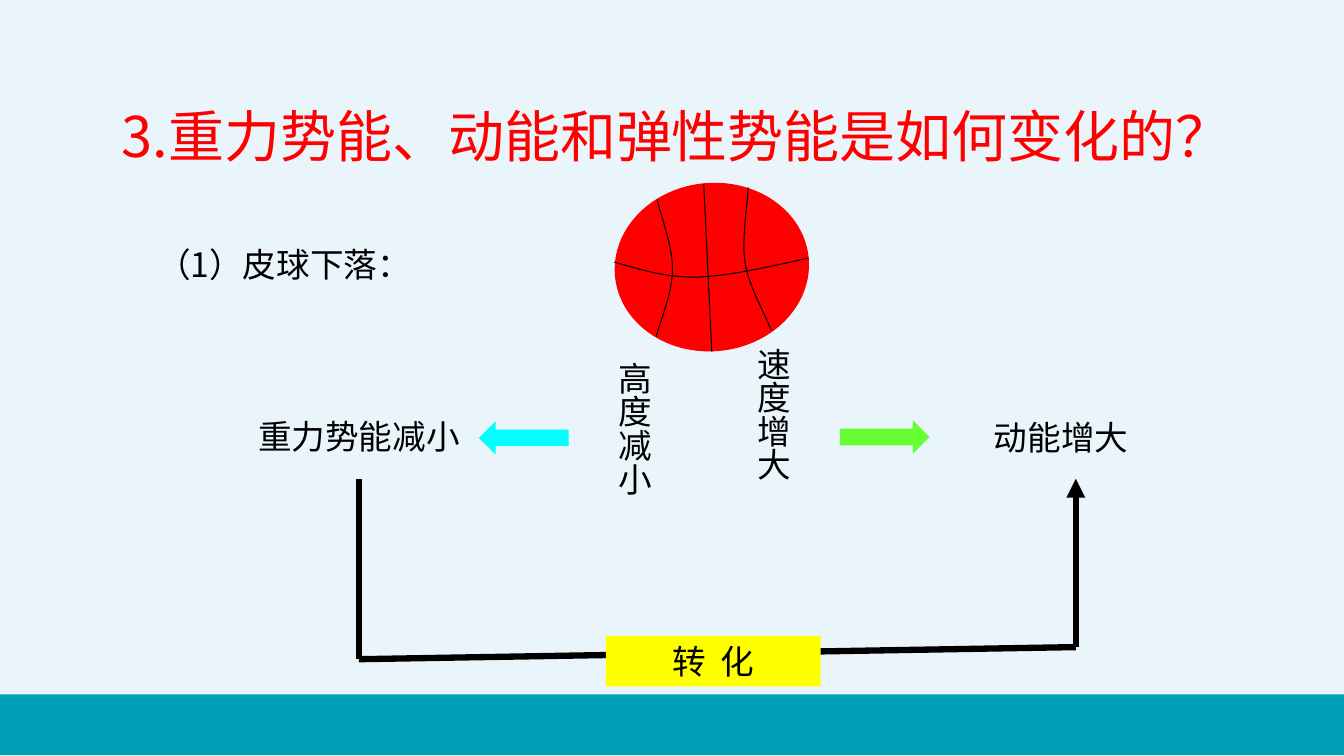
from lxml import etree
from pptx import Presentation
from pptx.dml.color import RGBColor
from pptx.enum.dml import MSO_FILL
from pptx.enum.shapes import MSO_CONNECTOR, MSO_SHAPE
from pptx.enum.text import MSO_ANCHOR, MSO_AUTO_SIZE, PP_ALIGN
from pptx.oxml.ns import qn
from pptx.util import Inches, Pt

RECTANGLE, OVAL = MSO_SHAPE.RECTANGLE, MSO_SHAPE.OVAL
LEFT_ARROW, DOWN_ARROW = MSO_SHAPE.LEFT_ARROW, MSO_SHAPE.DOWN_ARROW
STRAIGHT = MSO_CONNECTOR.STRAIGHT
LEFT, CENTER = PP_ALIGN.LEFT, PP_ALIGN.CENTER
TOP, MIDDLE = MSO_ANCHOR.TOP, MSO_ANCHOR.MIDDLE
GROW = MSO_AUTO_SIZE.SHAPE_TO_FIT_TEXT

FONT = "Noto Sans CJK SC"
PALE_BLUE = RGBColor(0xEA, 0xF5, 0xFB)
TEAL = RGBColor(0x00, 0x9F, 0xB9)
RED = RGBColor(0xFF, 0x00, 0x00)
BLACK = RGBColor(0x00, 0x00, 0x00)
CYAN = RGBColor(0x00, 0xFF, 0xFF)
GREEN = RGBColor(0x66, 0xFF, 0x33)
YELLOW = RGBColor(0xFF, 0xFF, 0x00)

BALL_SEAMS = [
    [(6.52, 1.98), (6.54, 2.1), (6.68, 2.46), (6.67, 2.68),
     (6.67, 2.91), (6.54, 3.21), (6.51, 3.34)],
    [(7.42, 1.86), (7.42, 1.99), (7.35, 2.38), (7.39, 2.61),
     (7.43, 2.85), (7.6, 3.14), (7.65, 3.28)],
    [(6.09, 2.6), (6.34, 2.67), (6.58, 2.75), (6.9, 2.75),
     (7.22, 2.74), (7.62, 2.65), (8.02, 2.56)],
    [(6.98, 1.83), (6.98, 1.83), (7.02, 2.66), (7.06, 3.49)],
]
CURVE_STEPS = 12


def add_block(slide, preset, box, fill=None, rotation=0):
    """Add a preset shape without an outline; no fill colour leaves it clear."""
    block = slide.shapes.add_shape(preset, *map(Inches, box))
    block.shadow.inherit = False
    block.line.fill.background()
    if fill is None:
        block.fill.background()
    else:
        block.fill.solid()
        block.fill.fore_color.rgb = fill
    block.rotation = rotation
    return block


def write(frame, pieces, size=24, color=BLACK, align=CENTER, anchor=TOP):
    """Write the pieces as runs of one paragraph and return the paragraph."""
    frame.vertical_anchor = anchor
    paragraph = frame.paragraphs[0]
    paragraph.alignment = align
    for piece in pieces:
        run = paragraph.add_run()
        run.text = piece
        run.font.size = Pt(size)
        run.font.name = FONT
        run.font.color.rgb = color
        east_asian = etree.SubElement(run.font._element, qn("a:ea"))
        east_asian.set("typeface", FONT)
    return paragraph


def add_label(slide, box, text, **style):
    """Add a wrapping text box and return its paragraph."""
    frame = slide.shapes.add_textbox(*map(Inches, box)).text_frame
    frame.word_wrap = True
    frame.auto_size = GROW
    return write(frame, [text], **style)


def add_vertical_label(slide, box, tip, text):
    """Add vertical text carried by a clear down arrow."""
    carrier = add_block(slide, DOWN_ARROW, box)
    carrier.adjustments[1] = tip
    frame = carrier.text_frame
    frame.word_wrap = False
    frame._txBody.bodyPr.set("vert", "eaVert")
    write(frame, [text], anchor=MIDDLE)


def curve_points(controls):
    """Return points along a chain of cubic curves."""
    points = [controls[0]]
    for first in range(0, len(controls) - 1, 3):
        a, b, c, d = controls[first:first + 4]
        for step in range(1, CURVE_STEPS + 1):
            t = step / CURVE_STEPS
            u = 1 - t
            points.append(tuple(
                u**3 * a[i] + 3 * u * u * t * b[i] + 3 * u * t * t * c[i] + t**3 * d[i]
                for i in (0, 1)))
    return points


def add_seam(slide, controls):
    """Draw one curved seam of the ball."""
    points = [(Inches(x), Inches(y)) for x, y in curve_points(controls)]
    builder = slide.shapes.build_freeform(*points[0])
    builder.add_line_segments(points[1:], close=False)
    seam = builder.convert_to_shape()
    seam.shadow.inherit = False
    seam.fill.background()
    seam.line.color.rgb = BLACK
    seam.line.width = Pt(0.75)


def add_ball(slide):
    """Draw the tilted red ball with its seams."""
    ball = add_block(slide, OVAL, (6.1, 1.82, 1.92, 1.66), RED, 354.4)
    ball.line.color.rgb = RED
    ball.line.width = Pt(0.75)
    for controls in BALL_SEAMS:
        add_seam(slide, controls)


def add_path_line(slide, start, end, arrow=False):
    """Draw a thick black line, with an arrowhead at its end if asked."""
    link = slide.shapes.add_connector(STRAIGHT, *map(Inches, start + end))
    link.line.color.rgb = BLACK
    link.line.width = Pt(4.5)
    if arrow:
        head = etree.SubElement(link.line._get_or_add_ln(), qn("a:tailEnd"))
        head.set("type", "triangle")
    etree.SubElement(link._element.spPr, qn("a:effectLst"))


def add_conversion(slide):
    """Draw the path from potential to kinetic energy and its yellow label."""
    corners = [(3.56, 4.75), (3.56, 6.54), (10.67, 6.42), (10.67, 4.75)]
    for start, end in zip(corners, corners[1:]):
        add_path_line(slide, start, end, arrow=end == corners[-1])
    conversion = add_block(slide, RECTANGLE, (6.01, 6.31, 2.13, 0.5), YELLOW)
    conversion.text_frame.auto_size = GROW
    paragraph = write(conversion.text_frame, ["转", " ", "化"])
    paragraph.runs[1].font._element.set("spc", "540")


def main():
    """Build the slide and save it."""
    deck = Presentation()
    deck.slide_width, deck.slide_height = Inches(13.33), Inches(7.5)
    slide = deck.slides.add_slide(deck.slide_layouts[6])
    slide.background.fill.solid()
    slide.background.fill.fore_color.rgb = PALE_BLUE
    add_block(slide, RECTANGLE, (0, 6.89, 13.33, 0.6), TEAL)

    add_ball(slide)
    add_vertical_label(slide, (5.78, 3.49, 1.01, 1.83), 0.61, "高度减小")
    add_vertical_label(slide, (7, 3.35, 1.33, 2.33), 0.59, "速度增大")
    add_label(slide, (1.56, 4.08, 4, 0.5), "重力势能减小")
    add_label(slide, (8.97, 4.09, 3.11, 0.5), "动能增大")
    add_block(slide, LEFT_ARROW, (4.75, 4.18, 0.89, 0.33), CYAN)
    add_block(slide, LEFT_ARROW, (8.33, 4.17, 0.89, 0.33), GREEN, 180)
    add_conversion(slide)

    add_label(slide, (1.46, 2.37, 2.74, 0.5), "（1）皮球下落：", align=LEFT)
    title = add_label(slide, (1.11, 0.62, 11.63, 1.11),
                      "3.重力势能、动能和弹性势能是如何变化的？",
                      size=40, color=RED, align=LEFT)
    title.line_spacing = 1.5
    deck.save("out.pptx")


if __name__ == "__main__":
    main()
